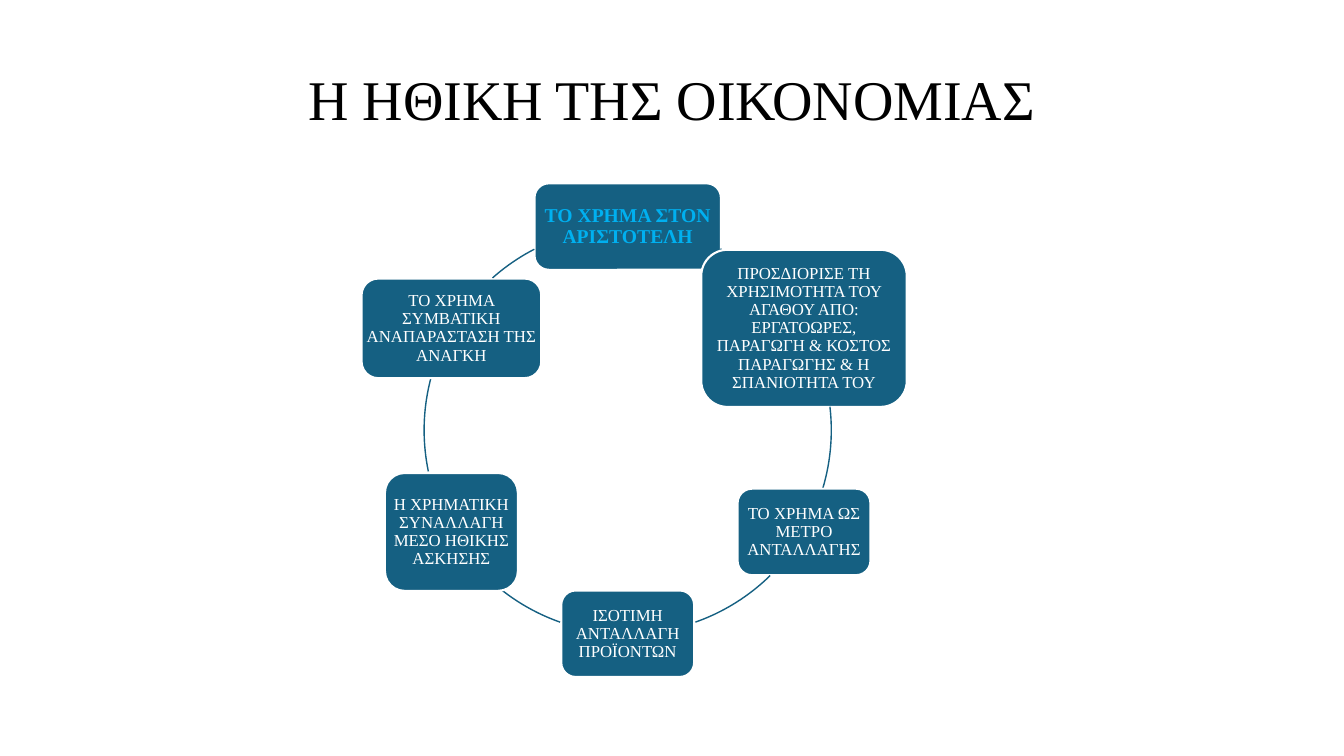
from math import cos, radians, sin

from pptx import Presentation
from pptx.dml.color import RGBColor
from pptx.enum.shapes import MSO_SHAPE
from pptx.enum.text import MSO_ANCHOR, PP_ALIGN
from pptx.util import Cm, Pt

ROUND, ARC = MSO_SHAPE.ROUNDED_RECTANGLE, MSO_SHAPE.ARC
MIDDLE, BOTTOM = MSO_ANCHOR.MIDDLE, MSO_ANCHOR.BOTTOM
CENTER = PP_ALIGN.CENTER
FONT = "Times New Roman"
BLUE, WHITE, BLACK, SKY = "156082", "FFFFFF", "000000", "00B0F0"

# Clockwise from the top: text, width, height, arc start and end in degrees
STEPS = [
    ("ΤΟ ΧΡΗΜΑ ΣΤΟΝ ΑΡΙΣΤΟΤΕΛΗ", 4.7, 2.18, 297.1, 297.5),
    ("ΠΡΟΣΔΙΟΡΙΣΕ ΤΗ ΧΡΗΣΙΜΟΤΗΤΑ ΤΟΥ ΑΓΑΘΟΥ ΑΠΟ: ΕΡΓΑΤΟΩΡΕΣ, "
     "ΠΑΡΑΓΩΓΗ & ΚΟΣΤΟΣ ΠΑΡΑΓΩΓΗΣ & Η ΣΠΑΝΙΟΤΗΤΑ ΤΟΥ",
     5.18, 3.96, 353.4, 16.5),
    ("ΤΟ ΧΡΗΜΑ ΩΣ ΜΕΤΡΟ ΑΝΤΑΛΛΑΓΗΣ", 3.35, 2.18, 45.6, 70.6),
    ("ΙΣΟΤΙΜΗ ΑΝΤΑΛΛΑΓΗ ΠΡΟΪΟΝΤΩΝ", 3.35, 2.18, 109.4, 128),
    ("Η ΧΡΗΜΑΤΙΚΗ ΣΥΝΑΛΛΑΓΗ ΜΕΣΟ ΗΘΙΚΗΣ ΑΣΚΗΣΗΣ",
     3.35, 2.97, 168.3, 194.6),
    ("ΤΟ ΧΡΗΜΑ ΣΥΜΒΑΤΙΚΗ ΑΝΑΠΑΡΑΣΤΑΣΗ ΤΗΣ ΑΝΑΓΚΗ",
     4.53, 2.51, 228.4, 242.7),
]


def color(code):
    return RGBColor.from_string(code)


def write(frame, text, size, code, anchor, bold=False):
    frame.word_wrap = True
    frame.vertical_anchor = anchor
    line = frame.paragraphs[0]
    line.text = text
    line.alignment = CENTER
    line.line_spacing = 0.9
    line.font.name = FONT
    line.font.size = Pt(size)
    line.font.bold = bold
    line.font.color.rgb = color(code)


def add_title(slide, left, top, width, height):
    box = slide.shapes.add_textbox(Cm(left), Cm(top), Cm(width), Cm(height))
    write(box.text_frame, "Η ΗΘΙΚΗ ΤΗΣ ΟΙΚΟΝΟΜΙΑΣ", 40, BLACK, BOTTOM)


def add_shape(slide, kind, mid_x, mid_y, width, height, line, weight):
    shape = slide.shapes.add_shape(
        kind, Cm(mid_x - width / 2), Cm(mid_y - height / 2),
        Cm(width), Cm(height))
    shape.shadow.inherit = False
    shape.line.color.rgb = color(line)
    shape.line.width = Pt(weight)
    return shape


def add_cycle(slide, left, top, size):
    radius = size / 2
    mid_x, mid_y = left + radius, top + radius
    for i, (text, width, height, start, end) in enumerate(STEPS):
        # Box centred on the ring
        turn = radians(360 / len(STEPS) * i - 90)
        box = add_shape(slide, ROUND, mid_x + radius * cos(turn),
                        mid_y + radius * sin(turn), width, height, WHITE, 1.5)
        box.fill.solid()
        box.fill.fore_color.rgb = color(BLUE)
        frame = box.text_frame
        frame.margin_left = frame.margin_right = 0
        frame.margin_top = frame.margin_bottom = 0
        first = i == 0
        write(frame, text, 14 if first else 12, SKY if first else WHITE,
              MIDDLE, first)

        # Arc to the next box; one degree is 0.6 adjustment units
        arc = add_shape(slide, ARC, mid_x, mid_y, size, size, BLUE, 1)
        arc.fill.background()
        arc.adjustments[0] = start * 0.6
        arc.adjustments[1] = end * 0.6


def main():
    deck = Presentation()
    deck.slide_width, deck.slide_height = Cm(33.87), Cm(19.05)
    slide = deck.slides.add_slide(deck.slide_layouts[6])
    add_title(slide, 4.23, 0.97, 25.4, 2.49)
    add_cycle(slide, 10.69, 5.71, 10.26)
    deck.save("out.pptx")


if __name__ == "__main__":
    main()
